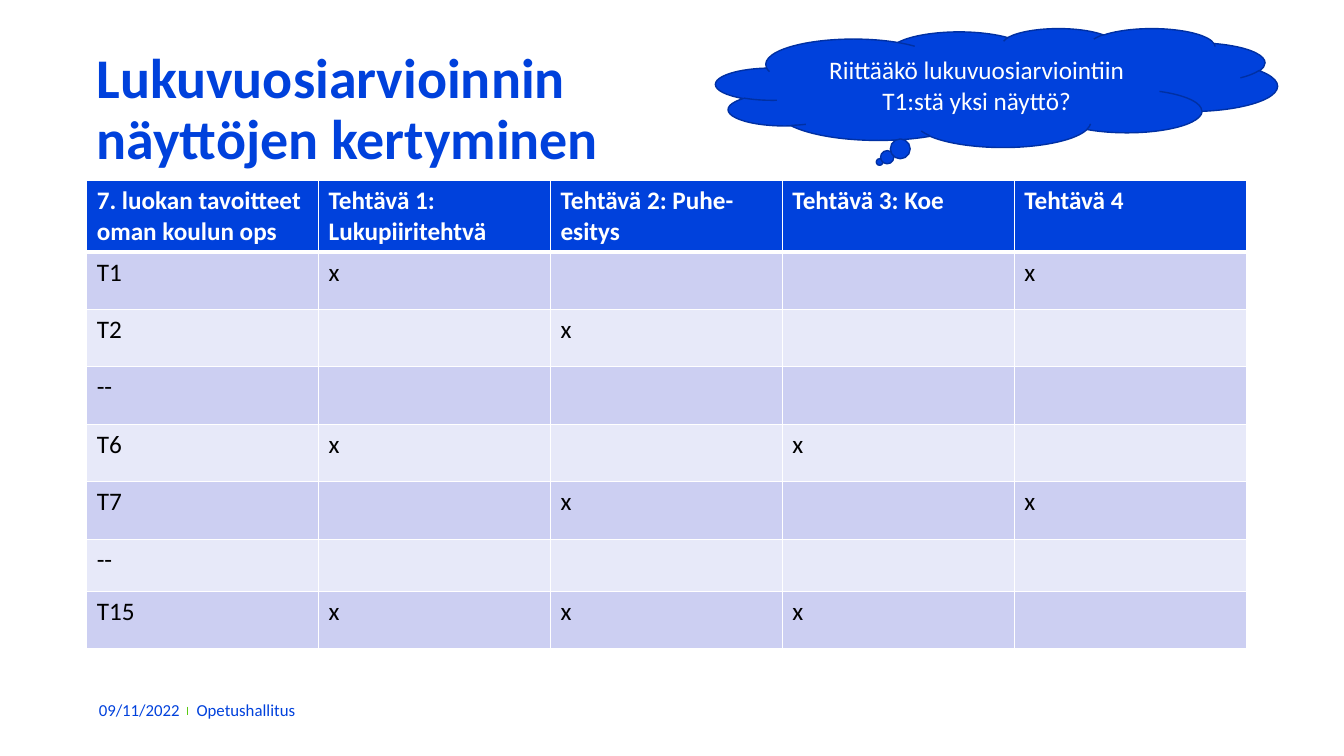
from lxml import etree
from pptx import Presentation, util as u
from pptx.dml.color import RGBColor
from pptx.enum import shapes, text
from pptx.oxml.ns import qn

PX = 9144
HUES = {"blue": "0041DC", "edge": "0030A3", "green": "5BCA13", "white": "FFFFFF",
        "black": "000000", "dark": "CCCFF2", "light": "E7E9F9"}


def hue(name):
    return RGBColor.from_string(HUES[name])


def write(frame, words, size, color, bold=False):
    frame.word_wrap = True
    para = frame.paragraphs[0]
    run = para.add_run()
    run.text = words
    run.font.name = "Calibri"
    run.font.size = u.Pt(size)
    run.font.bold = bold
    run.font.color.rgb = hue(color)
    return para


deck = Presentation()
deck.slide_width, deck.slide_height = 1333 * PX, 750 * PX
slide = deck.slides.add_slide(deck.slide_layouts[6])
items = slide.shapes

tick = items.add_connector(shapes.MSO_CONNECTOR.STRAIGHT, 186 * PX, 701 * PX, 186 * PX, 709 * PX)
tick.line.color.rgb = hue("green")
tick.line.width = u.Pt(1.25)
etree.SubElement(tick._element.spPr, qn("a:effectLst"))

title = items.add_textbox(86 * PX, 45 * PX, 706 * PX, 190 * PX)
para = write(title.text_frame, "Lukuvuosiarvioinnin näyttöjen kertyminen", 40, "blue", True)
para.line_spacing = 0.9

rows = [
    ["7. luokan tavoitteet oman koulun ops", "Tehtävä 1: Lukupiiritehtvä",
     "Tehtävä 2: Puhe-esitys", "Tehtävä 3: Koe", "Tehtävä 4"],
    ["T1", "x", "", "", "x"],
    ["T2", "", "x", "", ""],
    ["--", "", "", "", ""],
    ["T6", "x", "", "x", ""],
    ["T7", "", "x", "", "x"],
    ["--", "", "", "", ""],
    ["T15", "x", "x", "x", ""],
]
highs = [71, 57, 57, 57, 57, 57, 52, 57]
grid = items.add_table(len(rows), 5, 86 * PX, 179 * PX, 1150 * PX, sum(highs) * PX).table
for col in grid.columns:
    col.width = 230 * PX
for r, row in enumerate(rows):
    grid.rows[r].height = highs[r] * PX
    for c, words in enumerate(row):
        cell = grid.cell(r, c)
        props = cell._tc.get_or_add_tcPr()
        for side in "LRTB":
            thick = 3 if (r, side) in [(0, "B"), (1, "T")] else 1
            edge = etree.SubElement(props, qn("a:ln" + side), w=str(u.Pt(thick)))
            fill = etree.SubElement(edge, qn("a:solidFill"))
            etree.SubElement(fill, qn("a:srgbClr"), val=HUES["white"])
        cell.fill.solid()
        cell.fill.fore_color.rgb = hue("blue" if r == 0 else "dark" if r % 2 else "light")
        if words:
            write(cell.text_frame, words, 18, "black" if r else "white", r == 0)

for left, wide, words in [(98, 97, "09/11/2022"), (195, 473, "Opetushallitus")]:
    frame = items.add_textbox(left * PX, 690 * PX, wide * PX, 29 * PX).text_frame
    frame.margin_left = frame.margin_right = frame.margin_top = frame.margin_bottom = 0
    frame.vertical_anchor = text.MSO_ANCHOR.MIDDLE
    write(frame, words, 12, "blue")

cloud = items.add_shape(shapes.MSO_SHAPE.CLOUD_CALLOUT, 710 * PX, 28 * PX, 557 * PX, 118 * PX)
cloud.shadow.inherit = False
cloud.fill.solid()
cloud.fill.fore_color.rgb = hue("blue")
cloud.line.color.rgb = hue("edge")
cloud.line.width = u.Pt(1)
cloud.text_frame.vertical_anchor = text.MSO_ANCHOR.MIDDLE
para = write(cloud.text_frame, "Riittääkö lukuvuosiarviointiin T1:stä yksi näyttö?", 18, "white")
para.alignment = text.PP_ALIGN.CENTER

deck.save("out.pptx")
